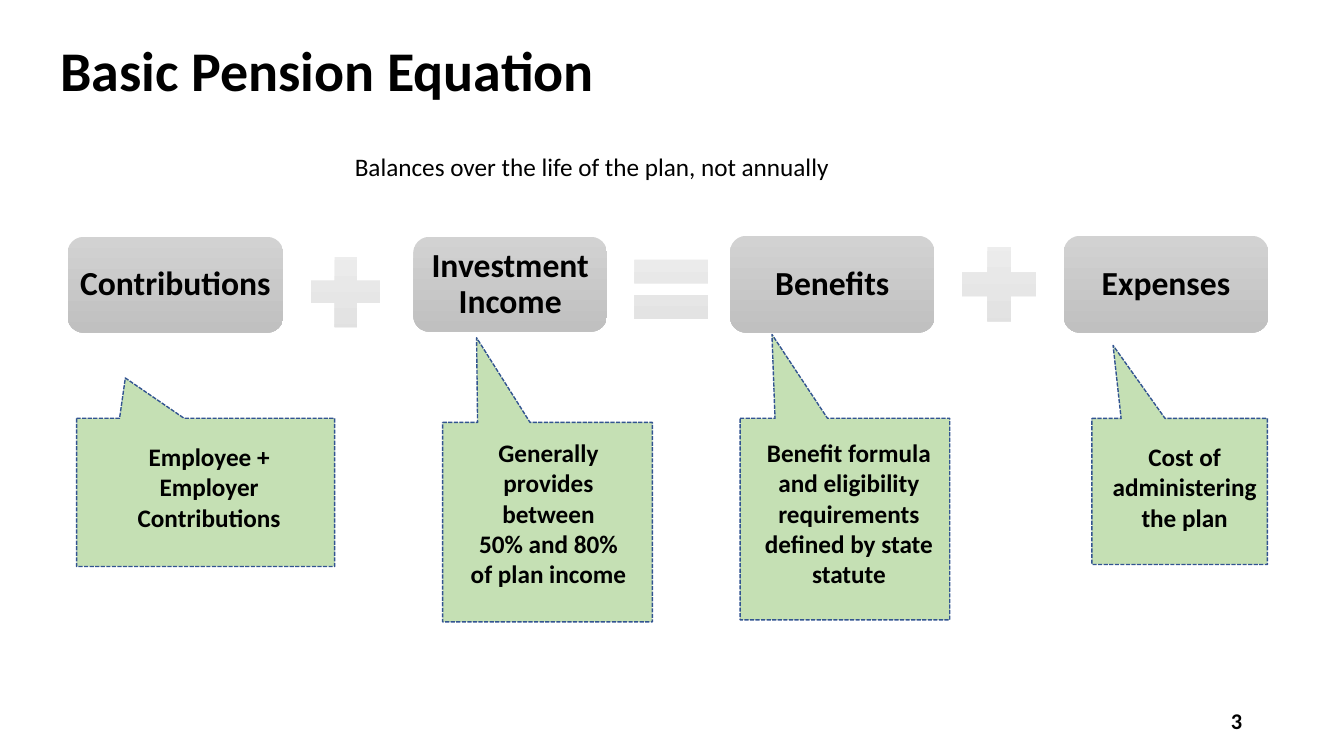
"""Build the Basic Pension Equation slide."""
from dataclasses import dataclass

from pptx import Presentation
from pptx.dml.color import RGBColor
from pptx.enum.dml import MSO_LINE
from pptx.enum.shapes import MSO_SHAPE
from pptx.enum.text import MSO_ANCHOR, MSO_AUTO_SIZE, PP_ALIGN
from pptx.util import Inches, Pt

ROUNDED = MSO_SHAPE.ROUNDED_RECTANGLE
CALLOUT = MSO_SHAPE.RECTANGULAR_CALLOUT
PLUS = MSO_SHAPE.MATH_PLUS
EQUAL = MSO_SHAPE.MATH_EQUAL
DASH = MSO_LINE.SQUARE_DOT
TOP, MIDDLE = MSO_ANCHOR.TOP, MSO_ANCHOR.MIDDLE
LEFT, CENTER, RIGHT = PP_ALIGN.LEFT, PP_ALIGN.CENTER, PP_ALIGN.RIGHT
NO_AUTOFIT = MSO_AUTO_SIZE.NONE
TITLE_ONLY = 5


@dataclass(frozen=True)
class Theme:
    font: str = "Calibri"
    text: str = "000000"
    term: tuple = ("D2D2D2", "C0C0C0")
    operator: tuple = ("EDEDED", "E1E1E1")
    note: str = "C5E0B4"
    note_line: str = "325491"
    title_size: int = 40
    term_size: int = 24
    body_size: int = 18
    number_size: int = 16


THEME = Theme()

TERMS = [
    ("Contributions", (0.67, 2.35, 2.14, 0.95)),
    ("Investment Income", (4.1, 2.35, 1.92, 0.94)),
    ("Benefits", (7.24, 2.34, 2.03, 0.96)),
    ("Expenses", (10.55, 2.34, 2.03, 0.96)),
]
OPERATORS = [
    (PLUS, (2.96, 2.42, 0.94, 0.95)),
    (EQUAL, (6.16, 2.37, 1, 1)),
    (PLUS, (9.41, 2.32, 1, 1)),
]
NOTES = [
    ("Employee + Employer Contributions", (0.76, 4.15, 2.56, 1.47),
     (-0.311, -0.772), (0.26, 0.23, 0.19, 0.05)),
    ("Generally provides\vbetween\n50% and 80%\vof plan income", (4.39, 4.19, 2.08, 1.98),
     (-0.338, -0.924), (0.21, 0.15, 0.19, 0.05)),
    ("Benefit formula and eligibility requirements defined by state statute",
     (7.34, 4.15, 2.08, 2), (-0.348, -0.916), (0.16, 0.19, 0.08, 0.05)),
    ("Cost of\vadministering\vthe plan", (10.83, 4.15, 1.74, 1.45),
     (-0.379, -0.999), (0.13, 0.23, 0.03, 0.05)),
]


def write(frame, text, size=THEME.body_size, bold=True, align=CENTER, anchor=MIDDLE,
          spacing=1.0, insets=(0.1, 0.05, 0.1, 0.05)):
    frame.word_wrap = True
    frame.auto_size = NO_AUTOFIT
    frame.vertical_anchor = anchor
    (frame.margin_left, frame.margin_top,
     frame.margin_right, frame.margin_bottom) = map(Inches, insets)
    frame.text = text
    for paragraph in frame.paragraphs:
        paragraph.alignment = align
        paragraph.line_spacing = spacing
        for run in paragraph.runs:
            run.font.name = THEME.font
            run.font.size = Pt(size)
            run.font.bold = bold
            run.font.color.rgb = RGBColor.from_string(THEME.text)


class SlideBuilder:
    def __init__(self, slide, theme):
        self.slide = slide
        self.theme = theme

    def title(self, text, box):
        title = self.slide.shapes.title
        title.left, title.top, title.width, title.height = map(Inches, box)
        write(title.text_frame, text, size=self.theme.title_size, align=LEFT,
              spacing=0.9, insets=(0.6, 0.05, 0.1, 0.05))

    def label(self, text, box, **text_format):
        label = self.slide.shapes.add_textbox(*map(Inches, box))
        write(label.text_frame, text, **text_format)

    def shape(self, kind, box):
        shape = self.slide.shapes.add_shape(kind, *map(Inches, box))
        shape.shadow.inherit = False
        return shape

    def gradient_shape(self, kind, box, colors):
        shape = self.shape(kind, box)
        shape.line.fill.background()
        shape.fill.gradient()
        shape.fill.gradient_angle = 270
        for stop, color in zip(shape.fill.gradient_stops, colors):
            stop.color.rgb = RGBColor.from_string(color)
        return shape

    def operator(self, kind, box):
        self.gradient_shape(kind, box, self.theme.operator)

    def term(self, text, box):
        shape = self.gradient_shape(ROUNDED, box, self.theme.term)
        write(shape.text_frame, text, size=self.theme.term_size, spacing=0.9,
              insets=(0.03,) * 4)

    def note(self, text, box, pointer, insets):
        shape = self.shape(CALLOUT, box)
        shape.adjustments[0], shape.adjustments[1] = pointer
        shape.fill.solid()
        shape.fill.fore_color.rgb = RGBColor.from_string(self.theme.note)
        shape.line.color.rgb = RGBColor.from_string(self.theme.note_line)
        shape.line.width = Pt(1)
        shape.line.dash_style = DASH
        write(shape.text_frame, text, anchor=TOP, insets=insets)


def main():
    presentation = Presentation()
    presentation.slide_width = Inches(13.33)
    presentation.slide_height = Inches(7.5)
    slide = presentation.slides.add_slide(presentation.slide_layouts[TITLE_ONLY])
    builder = SlideBuilder(slide, THEME)

    builder.title("Basic Pension Equation", (0, 0, 13.33, 1.45))
    builder.label("Balances over the life of the plan, not annually",
                  (3.42, 1.45, 5.08, 0.4), bold=False, align=LEFT, anchor=TOP)
    for term in TERMS:
        builder.term(*term)
    for operator in OPERATORS:
        builder.operator(*operator)
    for note in NOTES:
        builder.note(*note)
    builder.label("3", (9.42, 6.95, 3, 0.4), size=THEME.number_size, align=RIGHT)

    presentation.save("out.pptx")


if __name__ == "__main__":
    main()
